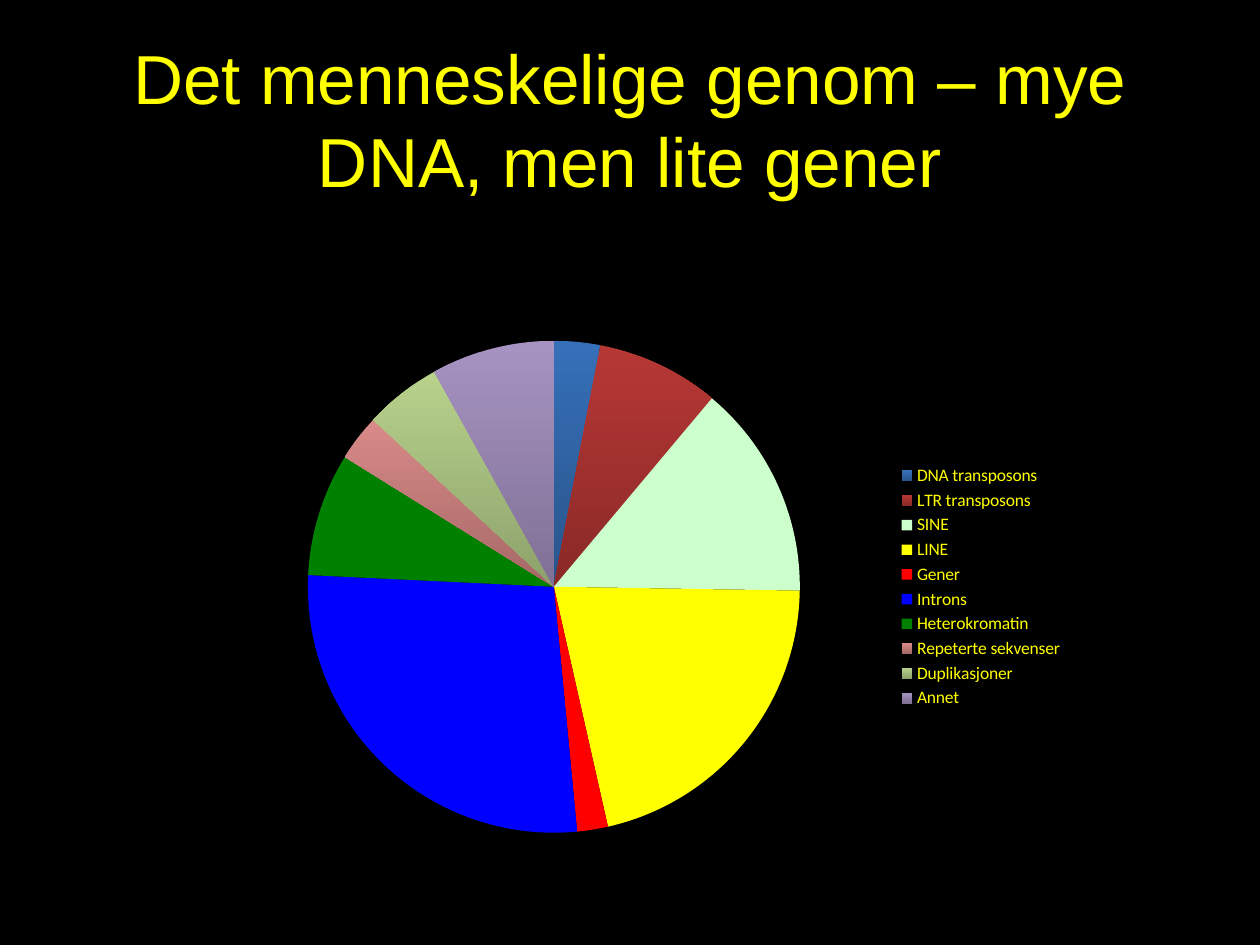
from lxml import etree
from pptx import Presentation
from pptx.chart.data import CategoryChartData
from pptx.dml.color import RGBColor
from pptx.enum.chart import XL_CHART_TYPE, XL_LEGEND_POSITION
from pptx.enum.text import MSO_ANCHOR, PP_ALIGN
from pptx.oxml.ns import qn
from pptx.util import Inches, Pt

PIE = XL_CHART_TYPE.PIE
RIGHT = XL_LEGEND_POSITION.RIGHT
MIDDLE = MSO_ANCHOR.MIDDLE
CENTER = PP_ALIGN.CENTER

WIDTH, HEIGHT = Inches(10), Inches(7.5)
BLACK, YELLOW = "000000", "FFFF00"

# Boxes as shares of the slide: left, top, width, height
TITLE_BOX = (0.05, 0.04, 0.9, 0.17)
CHART_BOX = (0.169, 0.343, 0.685, 0.556)
# Pie as shares of the chart
PIE_LAYOUT = {"x": 0.11, "y": 0.03, "w": 0.57, "h": 0.94}

# Category, share of the genome, one solid colour or a top and bottom colour
GENOME_PARTS = [
    ("DNA transposons", 3, ["3570B9", "2A548A"]),
    ("LTR transposons", 8, ["B63835", "8A2927"]),
    ("SINE", 14, ["CCFFCC"]),
    ("LINE", 21, ["FFFF00"]),
    ("Gener", 2, ["FF0000"]),
    ("Introns", 27, ["0000FF"]),
    ("Heterokromatin", 8, ["008000"]),
    ("Repeterte sekvenser", 3, ["D88A88", "A56866"]),
    ("Duplikasjoner", 5, ["B8D28C", "8DA16B"]),
    ("Annet", 8, ["A793C1", "7F7095"]),
]


def color(value):
    return RGBColor.from_string(value)


def place(box):
    left, top, width, height = box
    return [round(share * length) for share, length in
            zip((left, top, width, height), (WIDTH, HEIGHT, WIDTH, HEIGHT))]


def format_font(font, name, size, value):
    for attribute, setting in {"name": name, "size": Pt(size)}.items():
        setattr(font, attribute, setting)
    font.color.rgb = color(value)


def paint(fill, colors):
    if len(colors) == 1:
        fill.solid()
        fill.fore_color.rgb = color(colors[0])
        return
    fill.gradient()
    fill.gradient_angle = 270  # from top to bottom
    for stop, value in zip(fill.gradient_stops, colors):
        stop.color.rgb = color(value)


def add_title(slide, box, text):
    frame = slide.shapes.add_textbox(*place(box)).text_frame
    for attribute, setting in {"word_wrap": True, "vertical_anchor": MIDDLE}.items():
        setattr(frame, attribute, setting)
    paragraph = frame.paragraphs[0]
    paragraph.text = text
    paragraph.alignment = CENTER
    format_font(paragraph.runs[0].font, "Arial", 39.6, YELLOW)


def set_plot_layout(chart, shares):
    plot_area = chart.plots[0]._element.getparent()
    layout = plot_area.find(qn("c:layout"))
    if layout is None:
        layout = etree.Element(qn("c:layout"))
        plot_area.insert(0, layout)
    manual = etree.SubElement(layout, qn("c:manualLayout"))
    settings = {"layoutTarget": "inner", "xMode": "edge", "yMode": "edge", **shares}
    for tag, value in settings.items():
        etree.SubElement(manual, qn("c:" + tag)).set("val", str(value))


def add_genome_pie(slide, box, parts):
    data = CategoryChartData()
    data.categories = [name for name, _, _ in parts]
    data.add_series("Series 1", [share for _, share, _ in parts])
    chart = slide.shapes.add_chart(PIE, *place(box), data).chart
    chart.has_title = False
    format_font(chart.font, "Calibri", 10, "FFFFFF")

    # Legend
    chart.has_legend = True
    for attribute, setting in {"position": RIGHT, "include_in_layout": False}.items():
        setattr(chart.legend, attribute, setting)
    format_font(chart.legend.font, "Calibri", 10, YELLOW)

    # Slices
    plot = chart.plots[0]
    plot.vary_by_categories = True
    for index, (_, _, colors) in enumerate(parts):
        slice_format = plot.series[0].points[index].format
        paint(slice_format.fill, colors)
        slice_format.line.fill.background()
    set_plot_layout(chart, PIE_LAYOUT)


def main():
    presentation = Presentation()
    presentation.slide_width, presentation.slide_height = WIDTH, HEIGHT
    slide = presentation.slides.add_slide(presentation.slide_layouts[6])
    paint(slide.background.fill, [BLACK])
    add_title(slide, TITLE_BOX, "Det menneskelige genom – mye DNA, men lite gener")
    add_genome_pie(slide, CHART_BOX, GENOME_PARTS)
    presentation.save("out.pptx")


if __name__ == "__main__":
    main()
